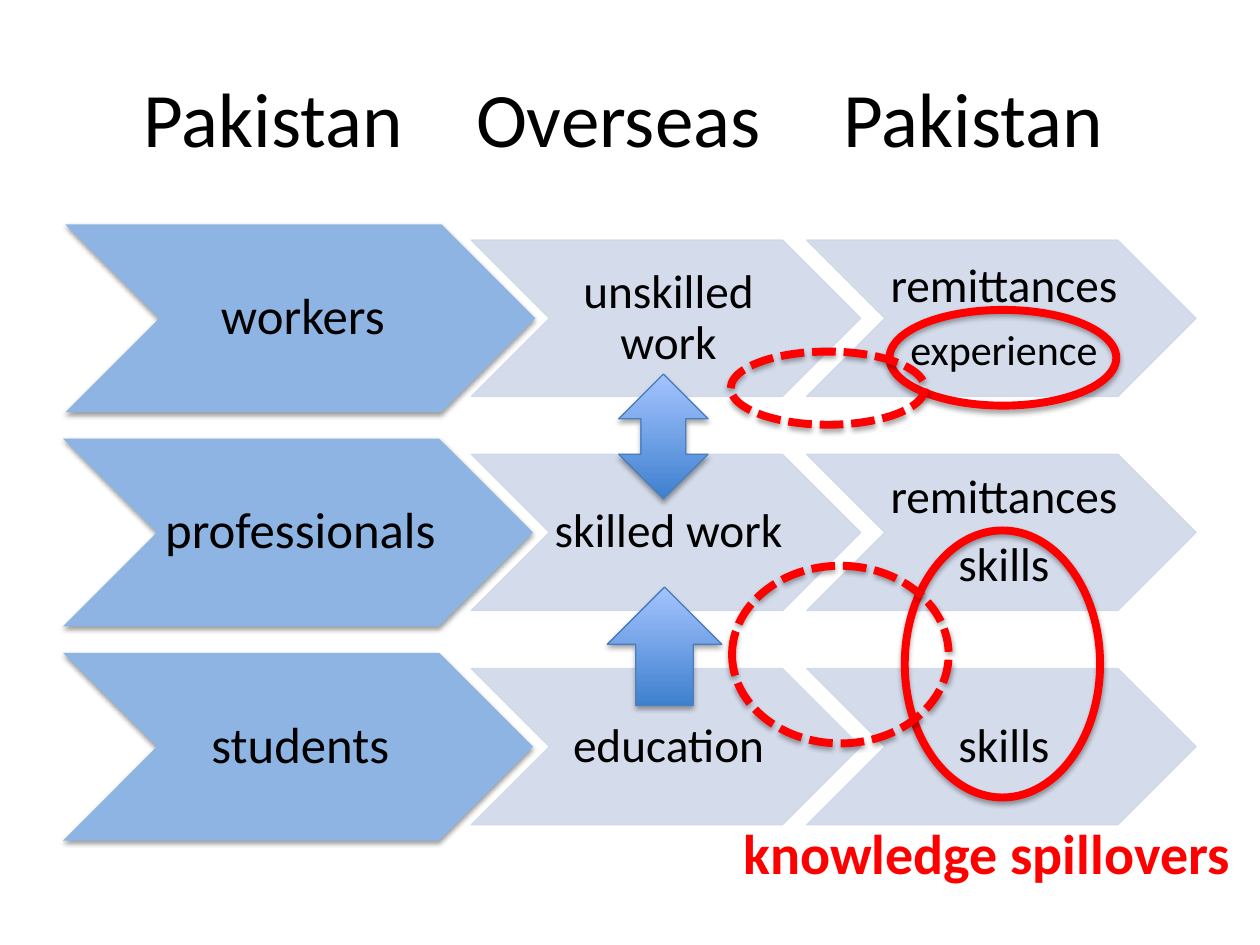
"""Build a slide on migration paths and the knowledge that spills over."""
from lxml.etree import SubElement
from pptx import Presentation
from pptx.dml.color import RGBColor
from pptx.enum.dml import MSO_LINE
from pptx.enum.shapes import MSO_SHAPE as SHAPE
from pptx.enum.text import MSO_ANCHOR as ANCHOR, PP_ALIGN as ALIGN
from pptx.oxml.ns import qn
from pptx.util import Pt

BLACK = RGBColor(0x00, 0x00, 0x00)
RED = RGBColor(0xFF, 0x00, 0x00)
BLUE = RGBColor(0x8E, 0xB4, 0xE3)
PALE = RGBColor(0xD0, 0xD8, 0xE8)
ARROW_DARK = RGBColor(0x3F, 0x80, 0xCE)
ARROW_LIGHT = RGBColor(0xA4, 0xC4, 0xFF)
ARROW_LINE = RGBColor(0x4B, 0x7E, 0xBC)
FONT = "Calibri"

HEADINGS = ["Pakistan", "Overseas", "Pakistan"]
HEADING_STOPS = [190, 400]
ROWS = [
    (37.4, "workers", [[("unskilled work", 27)], [("remittances", 27), ("experience", 24)]]),
    (36, "professionals", [[("skilled work", 27)], [("remittances", 27), ("skills", 27)]]),
    (36, "students", [[("education", 27)], [("skills", 27)]]),
]
FIRST_CENTER, ROW_PITCH = 181.9, 122.4
ORIGIN_SIZE = (268.6, 107.3)
STAGE_SIZE = (222.5, 89.3)
STAGE_LEFT, STAGE_PITCH = 269.3, 191.7

SKILL_ARROW = (SHAPE.UP_ARROW, 347, 335.5, 65.5, 67.7)
EXCHANGE_ARROW = (SHAPE.UP_DOWN_ARROW, 353.5, 213.8, 51.1, 71.3)
SKILLS_RING = (SHAPE.FLOWCHART_CONNECTOR, 517, 303.1, 111.6, 152.6)
OTHER_RINGS = [
    ((SHAPE.OVAL, 508.3, 177.1, 129.6, 54.7), False),
    ((SHAPE.OVAL, 417.6, 200.9, 110.9, 41.8), True),
    ((SHAPE.OVAL, 418.3, 323.3, 123.8, 101.5), True),
]


def add_shape(slide, kind, *box):
    shape = slide.shapes.add_shape(kind, *map(Pt, box))
    shape.shadow.inherit = False
    return shape


def add_shadow(shape, distance, opacity):
    effects = shape._element.spPr.find(qn("a:effectLst"))
    shadow = SubElement(effects, qn("a:outerShdw"), blurRad=str(Pt(3.1)),
                        dist=str(Pt(distance)), dir="5400000", rotWithShape="0")
    color = SubElement(shadow, qn("a:srgbClr"), val="000000")
    SubElement(color, qn("a:alpha"), val=str(opacity * 1000))


def add_chevron(slide, left, center, size, color, lines):
    width, height = size
    shape = add_shape(slide, SHAPE.CHEVRON, left, center - height / 2, width, height)
    shape.fill.solid()
    shape.fill.fore_color.rgb = color
    frame = shape.text_frame
    frame.word_wrap = True
    frame.vertical_anchor = ANCHOR.MIDDLE
    frame.margin_left, frame.margin_right = Pt(2.9), 0
    frame.margin_top = frame.margin_bottom = Pt(1.4)
    for index, (text, font_size) in enumerate(lines):
        paragraph = frame.add_paragraph() if index else frame.paragraphs[0]
        paragraph.text = text
        paragraph.alignment = ALIGN.CENTER
        paragraph.line_spacing = 0.9
        paragraph.space_before = Pt(9.5 if index else 0)
        set_font(paragraph.font, font_size, BLACK)
    return shape


def set_font(font, size, color, bold=False):
    font.name, font.size, font.bold = FONT, Pt(size), bold
    font.color.rgb = color


def add_stage(slide, left, center, lines):
    shape = add_chevron(slide, left, center, STAGE_SIZE, PALE, lines)
    shape.line.color.rgb = PALE
    shape.line.width = Pt(0.75)
    for color in shape._element.spPr.iter(qn("a:srgbClr")):
        SubElement(color, qn("a:alpha"), val="90000")


def add_arrow(slide, placement):
    shape = add_shape(slide, *placement)
    shape.fill.gradient()
    shape.fill.gradient_angle = 90
    for stop, position, color in zip(shape.fill.gradient_stops, (0, 1), (ARROW_DARK, ARROW_LIGHT)):
        stop.position = position
        stop.color.rgb = color
    shape.line.color.rgb = ARROW_LINE
    shape.line.width = Pt(0.75)
    add_shadow(shape, 1.8, 35)


def add_ring(slide, placement, dashed=False):
    shape = add_shape(slide, *placement)
    shape.fill.background()
    shape.line.color.rgb = RED
    shape.line.width = Pt(4.5)
    if dashed:
        shape.line.dash_style = MSO_LINE.SQUARE_DOT
    add_shadow(shape, 1.8, 35)


def set_title(slide):
    title = slide.shapes.title
    title.left, title.top, title.width, title.height = map(Pt, (36, 21.6, 648, 90))
    frame = title.text_frame
    frame.vertical_anchor = ANCHOR.MIDDLE
    frame.margin_left = Pt(46)
    paragraph = frame.paragraphs[0]
    paragraph.text = "\t".join(HEADINGS)
    paragraph.alignment = ALIGN.LEFT
    set_font(paragraph.font, 44, BLACK)
    properties = paragraph._p.get_or_add_pPr()
    tabs = properties.makeelement(qn("a:tabLst"))
    properties.insert_element_before(tabs, "a:defRPr", "a:extLst")
    for stop in HEADING_STOPS:
        SubElement(tabs, qn("a:tab"), pos=str(Pt(stop)), algn="l")


def add_caption(slide):
    caption = slide.shapes.add_textbox(*map(Pt, (417.6, 464.4, 296.6, 46.1)))
    caption.text_frame.word_wrap = False
    paragraph = caption.text_frame.paragraphs[0]
    paragraph.text = "knowledge spillovers"
    set_font(paragraph.font, 32, RED, bold=True)


def main():
    presentation = Presentation()
    presentation.slide_width, presentation.slide_height = Pt(720), Pt(540)
    slide = presentation.slides.add_slide(presentation.slide_layouts[5])
    set_title(slide)
    for row, (left, origin, stages) in enumerate(ROWS):
        center = FIRST_CENTER + row * ROW_PITCH
        chevron = add_chevron(slide, left, center, ORIGIN_SIZE, BLUE, [(origin, 29)])
        chevron.line.fill.background()
        add_shadow(chevron, 1.6, 38)
        for column, lines in enumerate(stages):
            add_stage(slide, STAGE_LEFT + column * STAGE_PITCH, center, lines)
    add_arrow(slide, SKILL_ARROW)
    add_ring(slide, SKILLS_RING)
    add_caption(slide)
    add_arrow(slide, EXCHANGE_ARROW)
    for placement, dashed in OTHER_RINGS:
        add_ring(slide, placement, dashed)
    presentation.save("out.pptx")


if __name__ == "__main__":
    main()
